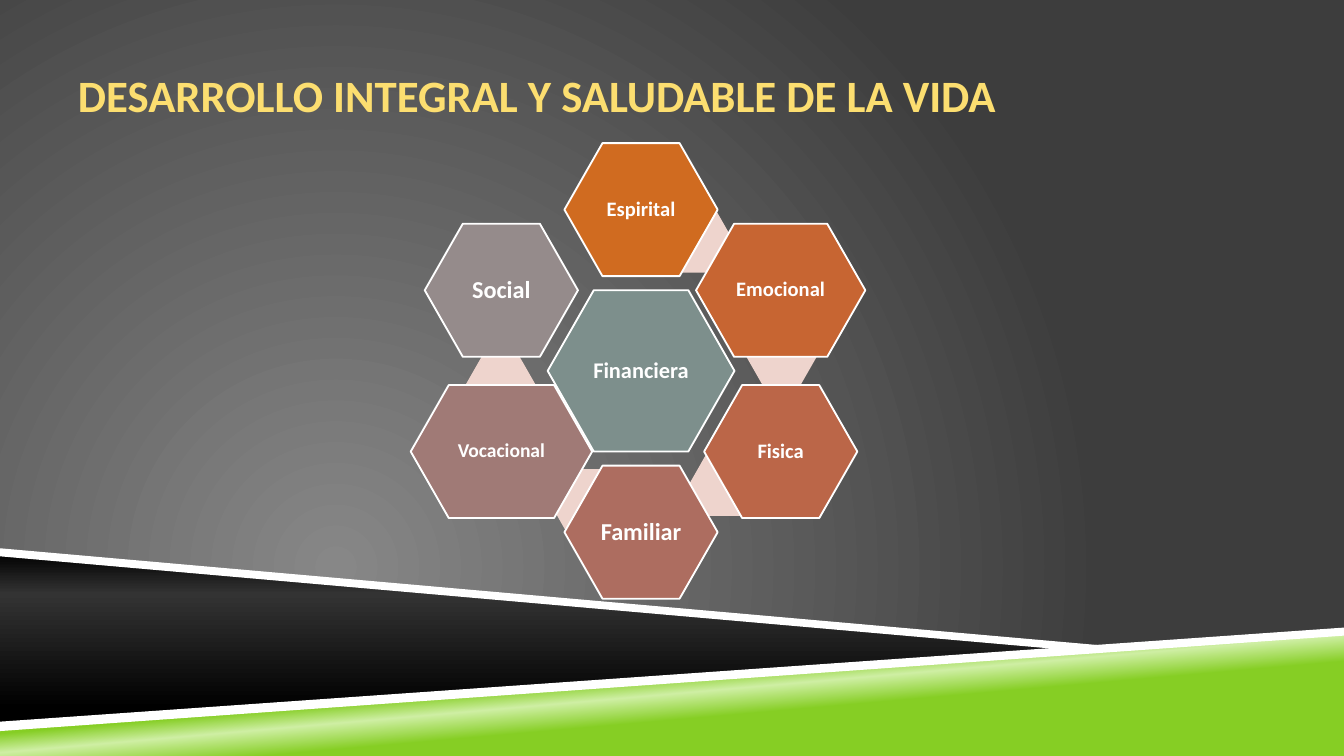
import math
from dataclasses import dataclass

import lxml.etree
import pptx
import pptx.dml.color
import pptx.enum.shapes
import pptx.enum.text
import pptx.oxml.ns
import pptx.util

Inches = pptx.util.Inches
qn = pptx.oxml.ns.qn
Point = tuple[float, float]
Stops = tuple[tuple[int, str], ...]


@dataclass(frozen=True)
class Theme:
    font: str = "Calibri"
    title: str = "FCDE70"
    white: str = "FFFFFF"
    link: str = "EED4CD"
    background: Stops = ((0, "878787"), (100, "3D3D3D"))
    black_band: Stops = ((0, "000000"), (24, "333333"), (90, "000000"))
    green_band: Stops = ((39, "86CE24"), (50, "CFEFA4"), (58, "86CE24"))
    title_size: float = 24


@dataclass(frozen=True)
class Area:
    label: str
    color: str
    size: float
    width: float = 1.14
    height: float = 0.99


THEME = Theme()
SLIDE_WIDTH = 10
SLIDE_HEIGHT = SLIDE_WIDTH * 9 / 16
CENTER = (4.77, 2.76)
RING_RADIUS = 1.2
LINK_RADIUS = 1.05
LINK_START = 24.4  # degrees clockwise from the top
LINK_SIZE = (0.52, 0.45)

CORE = Area("Financiera", "7D8F8C", 12, 1.39, 1.2)
RING = [  # clockwise from the top
    Area("Espirital", "D06B20", 11),
    Area("Emocional", "C76532", 11, 1.26),
    Area("Fisica", "BB6648", 11),
    Area("Familiar", "AD6D60", 13),
    Area("Vocacional", "A07A76", 10.5, 1.35),
    Area("Social", "958B8B", 13),
]


def rgb(color: str) -> pptx.dml.color.RGBColor:
    return pptx.dml.color.RGBColor.from_string(color)


def apply_format(target, values: dict) -> None:
    for name, value in values.items():
        setattr(target, name, value)


def set_text(shape, text: str, color: str, size: float, frame_format: dict, paragraph_format: dict) -> None:
    frame = shape.text_frame
    frame.text = text
    apply_format(frame, {"vertical_anchor": pptx.enum.text.MSO_ANCHOR.MIDDLE, **frame_format})
    paragraph = frame.paragraphs[0]
    apply_format(paragraph, paragraph_format)
    font = paragraph.runs[0].font
    apply_format(font, {"name": THEME.font, "size": pptx.util.Pt(size), "bold": True})
    font.color.rgb = rgb(color)


def set_gradient(parent, stops: Stops, angle: float | None = None) -> None:
    """Replace the solid fill in parent by a linear gradient, or a circular one without an angle."""
    gradient = lxml.etree.Element(qn("a:gradFill"), rotWithShape="1")
    stop_list = lxml.etree.SubElement(gradient, qn("a:gsLst"))
    for position, color in stops:
        stop = lxml.etree.SubElement(stop_list, qn("a:gs"), pos=str(position * 1000))
        lxml.etree.SubElement(stop, qn("a:srgbClr"), val=color)
    if angle is None:
        circle = lxml.etree.SubElement(gradient, qn("a:path"), path="circle")
        lxml.etree.SubElement(circle, qn("a:fillToRect"), l="50000", t="100000", r="100000", b="50000")
    else:
        lxml.etree.SubElement(gradient, qn("a:lin"), ang=str(int(angle * 60000)), scaled="0")
    parent.replace(parent.find(qn("a:solidFill")), gradient)


def add_band(slide, points: list[Point], stops: Stops | None = None, angle: float = 0) -> None:
    corners = [(Inches(x), Inches(y)) for x, y in points]
    builder = slide.shapes.build_freeform(*corners[0])
    builder.add_line_segments(corners[1:], close=True)
    shape = builder.convert_to_shape()
    shape.shadow.inherit = False
    shape.line.fill.background()
    shape.fill.solid()
    shape.fill.fore_color.rgb = rgb(THEME.white)
    if stops:
        set_gradient(shape.element.spPr, stops, angle)


def polar(radius: float, degrees: float) -> Point:
    angle = math.radians(degrees)
    return CENTER[0] + radius * math.sin(angle), CENTER[1] - radius * math.cos(angle)


def add_hexagon(slide, center: Point, width: float, height: float, color: str):
    shape = slide.shapes.add_shape(
        pptx.enum.shapes.MSO_SHAPE.HEXAGON,
        Inches(center[0] - width / 2), Inches(center[1] - height / 2), Inches(width), Inches(height),
    )
    shape.adjustments[0] = 0.286
    shape.shadow.inherit = False
    shape.fill.solid()
    shape.fill.fore_color.rgb = rgb(color)
    shape.line.fill.background()
    return shape


def add_area(slide, center: Point, area: Area) -> None:
    shape = add_hexagon(slide, center, area.width, area.height, area.color)
    shape.line.color.rgb = rgb(THEME.white)
    shape.line.width = pptx.util.Pt(1)
    margins = dict.fromkeys(("margin_left", "margin_right", "margin_top", "margin_bottom"), Inches(0.02))
    set_text(shape, area.label, THEME.white, area.size, {"word_wrap": False, **margins},
             {"alignment": pptx.enum.text.PP_ALIGN.CENTER, "line_spacing": 0.9})


def main() -> None:
    presentation = pptx.Presentation()
    apply_format(presentation, {"slide_width": Inches(SLIDE_WIDTH), "slide_height": Inches(SLIDE_HEIGHT)})
    slide = presentation.slides.add_slide(presentation.slide_layouts[5])

    # Background and bottom bands
    slide.background.fill.solid()
    set_gradient(slide.element.find(".//" + qn("p:bgPr")), THEME.background)
    add_band(slide, [(0, 4.11), (8.14, 4.82), (0, 5.4)], THEME.black_band, 90)
    add_band(slide, [(0, 5.41), (10, 4.7), (10, SLIDE_HEIGHT), (0, SLIDE_HEIGHT)], THEME.green_band, 265)
    add_band(slide, [(0, 4.08), (0, 4.14), (7.98, 4.84), (8.39, 4.82)])
    add_band(slide, [(10, 4.67), (0, 5.37), (0, 5.44), (10, 4.73)])

    # Title
    title = slide.shapes.title
    apply_format(title, {"left": Inches(0.58), "top": Inches(0.23),
                         "width": Inches(9.17), "height": Inches(0.94)})
    set_text(title, "DESARROLLO INTEGRAL Y SALUDABLE DE LA VIDA", THEME.title, THEME.title_size,
             {"margin_left": 0, "margin_right": 0, "word_wrap": True},
             {"alignment": pptx.enum.text.PP_ALIGN.LEFT})

    # Core, then the ring with a link hexagon behind each neighbouring pair
    add_area(slide, CENTER, CORE)
    step = 360 / len(RING)
    for index in range(len(RING) - 1):
        add_hexagon(slide, polar(LINK_RADIUS, LINK_START + index * step), *LINK_SIZE, THEME.link)
    for index, area in enumerate(RING):
        add_area(slide, polar(RING_RADIUS, index * step), area)

    presentation.save("out.pptx")


if __name__ == "__main__":
    main()
